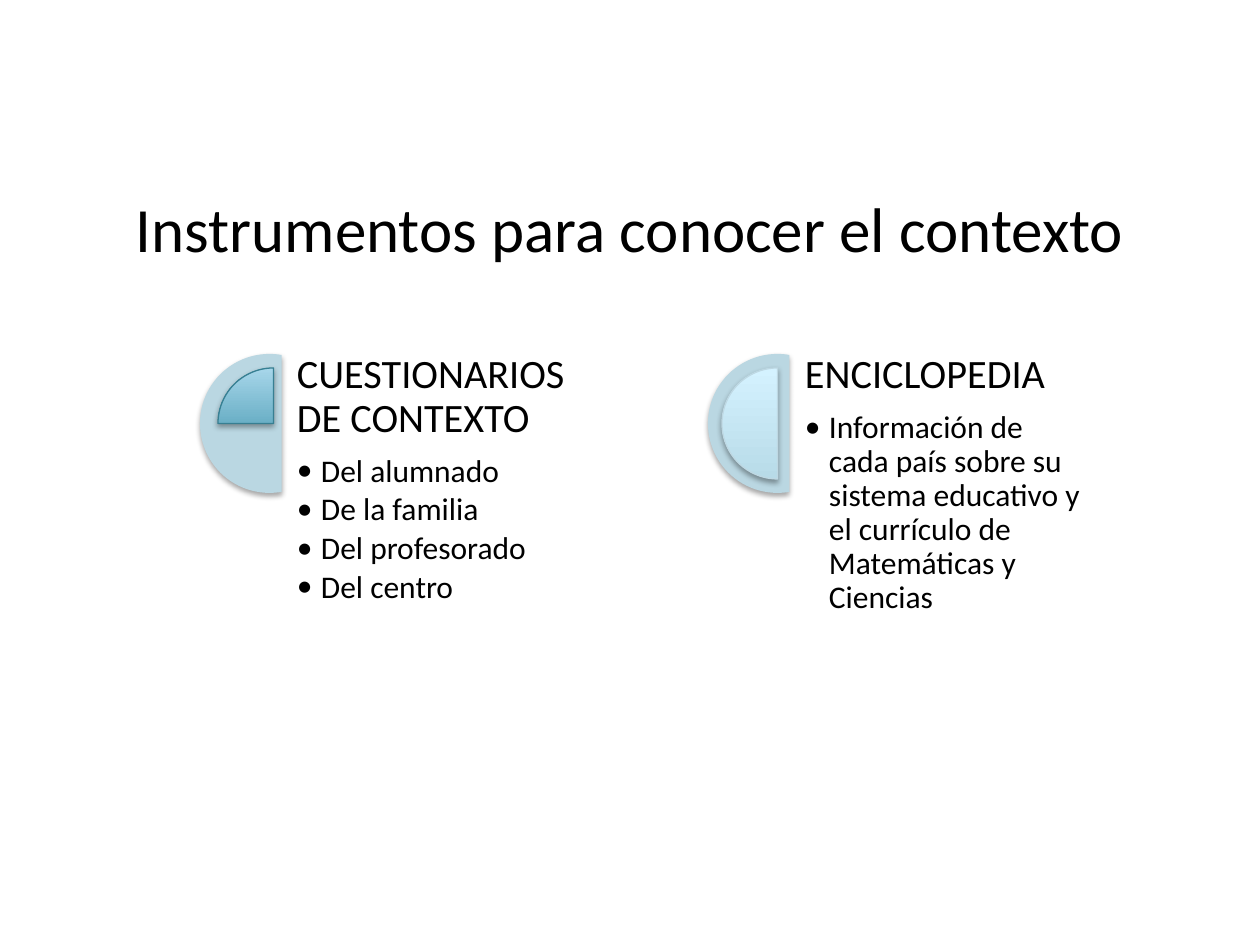
"""Build the slide on instruments for knowing the context."""
from lxml.etree import SubElement
from pptx import Presentation
from pptx.dml.color import RGBColor
from pptx.enum.shapes import MSO_SHAPE
from pptx.enum.text import MSO_ANCHOR, PP_ALIGN
from pptx.oxml.ns import qn
from pptx.util import Pt

PX = 914400 / 126
FONT = "Calibri"
COLORS = {
    "text": "000000",
    "shadow": "000000",
    "chord": "BAD7E2",
    "teal_dark": "2A87A0",
    "teal_light": "A7D6EA",
    "teal_line": "377F92",
    "ice_dark": "B8DBE8",
    "ice_light": "D4F2FF",
    "ice_line": "BED8E3",
}
TITLE = "Instrumentos para conocer el contexto"
INSTRUMENTS = [
    {
        "heading": "CUESTIONARIOS DE CONTEXTO",
        "items": ["Del alumnado", "De la familia", "Del profesorado", "Del centro"],
        "tone": "teal", "pie_inset": 18, "pie_angles": (108, 162),
    },
    {
        "heading": "ENCICLOPEDIA",
        "items": ["Información de cada país sobre su sistema educativo "
                  "y el currículo de Matemáticas y Ciencias"],
        "tone": "ice", "pie_inset": 14, "pie_angles": (54, 162),
    },
]
LEFT, TOP, COLUMN_STEP = 200, 354, 508
CHORD_SIZE, PIE_SIZE, PIE_DROP = 139, 111, 14
TEXT_OFFSET, TEXT_WIDTH, TEXT_HEIGHT = 97, 277, 556
BULLET_INDENT = 24


def emu(*lengths):
    return [round(length * PX) for length in lengths]


def color(name):
    return RGBColor.from_string(COLORS[name])


def add_shadow(shape):
    effects = SubElement(shape._element.spPr, qn("a:effectLst"))
    shadow = SubElement(effects, qn("a:outerShdw"), blurRad="40000", dist="23000",
                        dir="5400000", rotWithShape="0")
    tint = SubElement(shadow, qn("a:srgbClr"), val=COLORS["shadow"])
    SubElement(tint, qn("a:alpha"), val="35000")


def add_sector(page, kind, left, top, size, angles):
    shape = page.shapes.add_shape(kind, *emu(left, top, size, size))
    for index, angle in enumerate(angles):
        shape.adjustments[index] = angle
    return shape


def add_chord(page, left):
    chord = add_sector(page, MSO_SHAPE.CHORD, left, TOP, CHORD_SIZE, (48, 168))
    chord.fill.solid()
    chord.fill.fore_color.rgb = color("chord")
    chord.line.fill.background()
    add_shadow(chord)


def add_pie(page, left, angles, tone):
    pie = add_sector(page, MSO_SHAPE.PIE, left, TOP + PIE_DROP, PIE_SIZE, angles)
    pie.fill.gradient()
    pie.fill.gradient_angle = 90
    for stop, shade in zip(pie.fill.gradient_stops, ("dark", "light")):
        stop.color.rgb = color(f"{tone}_{shade}")
    pie.line.color.rgb = color(f"{tone}_line")
    pie.line.width = Pt(0.75)
    add_shadow(pie)


def add_box(page, left, top, width, height):
    frame = page.shapes.add_textbox(*emu(left, top, width, height)).text_frame
    frame.word_wrap = True
    return frame


def write(para, text, size, align=PP_ALIGN.LEFT, spacing=1.0, after=0, bullet=False):
    para.alignment = align
    para.line_spacing = spacing
    para.space_after = Pt(after)
    if bullet:
        para.level = 1
        properties = para._p.get_or_add_pPr()
        indent = emu(BULLET_INDENT)[0]
        properties.set("marL", str(indent))
        properties.set("indent", str(-indent))
        SubElement(properties, qn("a:buFont"), typeface=FONT)
        SubElement(properties, qn("a:buChar"), char="•")
    span = para.add_run()
    span.text = text
    span.font.size = Pt(size)
    span.font.name = FONT
    span.font.color.rgb = color("text")


def add_instrument(page, left, instrument):
    add_chord(page, left)
    add_pie(page, left + instrument["pie_inset"], instrument["pie_angles"],
            instrument["tone"])
    frame = add_box(page, left + TEXT_OFFSET, TOP, TEXT_WIDTH, TEXT_HEIGHT)
    frame.margin_left = frame.margin_right = 0
    frame.margin_top = frame.margin_bottom = 0
    write(frame.paragraphs[0], instrument["heading"], 23, spacing=0.9, after=8)
    for item in instrument["items"]:
        write(frame.add_paragraph(), item, 18, spacing=0.9, after=2.7, bullet=True)


def main():
    deck = Presentation()
    deck.slide_width, deck.slide_height = emu(1260, 945)
    page = deck.slides.add_slide(deck.slide_layouts[6])
    for column, instrument in enumerate(INSTRUMENTS):
        add_instrument(page, LEFT + column * COLUMN_STEP, instrument)
    title = add_box(page, 0, 183, 1260, 89)
    title.vertical_anchor = MSO_ANCHOR.MIDDLE
    write(title.paragraphs[0], TITLE, 36, align=PP_ALIGN.CENTER)
    deck.save("out.pptx")


if __name__ == "__main__":
    main()
